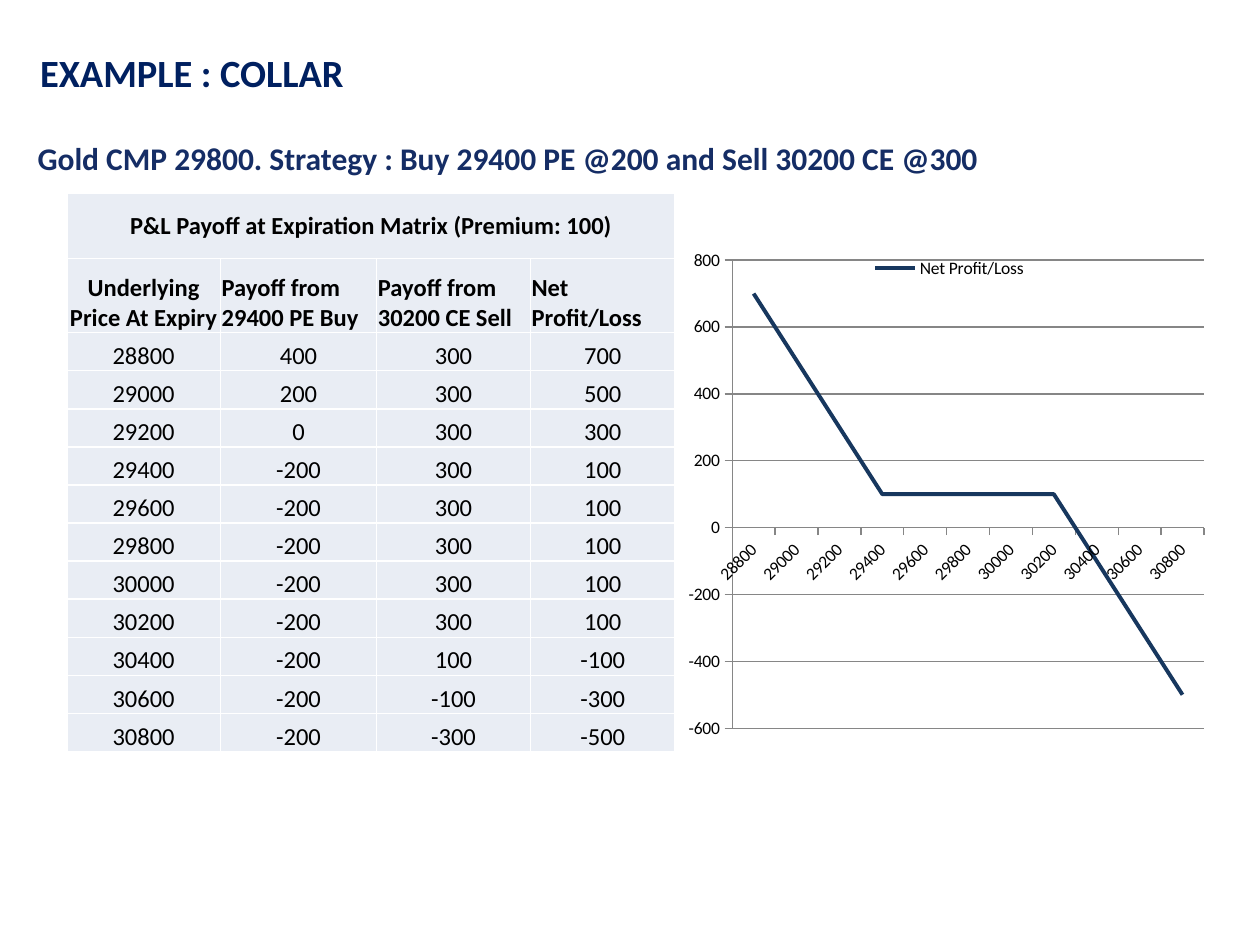
from lxml import etree
from pptx import Presentation, util as u
from pptx.chart.data import CategoryChartData
from pptx.dml.color import RGBColor
from pptx.enum import chart as ch, text
from pptx.oxml import parse_xml
from pptx.oxml.ns import nsdecls, qn

FONT = "Calibri"
HEADINGS = [
    ("EXAMPLE : COLLAR", (0.22, 0.3, 7.24, 0.55), 22, "002060"),
    ("Gold CMP 29800. Strategy : Buy 29400 PE @200 and Sell 30200 CE @300",
     (0.2, 1.05, 7.74, 0.4), 18, "152D65"),
]
TABLE_TITLE = "P&L Payoff at Expiration Matrix (Premium: 100)"
HEADERS = ["Underlying Price At Expiry", "Payoff from 29400 PE Buy",
           "Payoff from 30200 CE Sell", "Net Profit/Loss"]
PRICES = range(28800, 30801, 200)
PUT_STRIKE, PUT_COST = 29400, 200
CALL_STRIKE, CALL_INCOME = 30200, 300
COL_WIDTHS = [1.22, 1.24, 1.22, 1.15]
TABLE_LEFT, TABLE_TOP, TABLE_HEIGHT = 0.53, 1.53, 4.44
HEAD_HEIGHTS = [0.52, 0.59]
CHART_BOX = (5.38, 1.94, 4.31, 4.03)
PLOT = {"x": 0.1, "y": 0.031, "w": 0.869, "h": 0.922}


def rgb(value):
    return RGBColor.from_string(value)


def style(font, size, color="000000", bold=False):
    font.name, font.size, font.bold = FONT, u.Pt(size), bold
    font.color.rgb = rgb(color)


def payoff(price):
    put = max(PUT_STRIKE - price, 0) - PUT_COST
    call = CALL_INCOME - max(price - CALL_STRIKE, 0)
    return [price, put, call, put + call]


def add_heading(s, words, box, size, color):
    tf = s.shapes.add_textbox(*map(u.Inches, box)).text_frame
    tf.word_wrap = True
    tf.vertical_anchor = text.MSO_ANCHOR.MIDDLE
    tf.text = words
    style(tf.paragraphs[0].runs[0].font, size, color, True)


def format_cell(cell, words, bold, centred, anchor):
    cell.margin_left = cell.margin_right = cell.margin_top = u.Inches(0.01)
    cell.margin_bottom = 0
    cell.vertical_anchor = anchor
    tcPr = cell._tc.get_or_add_tcPr()
    for side in ("lnL", "lnR", "lnT", "lnB"):
        tcPr.append(parse_xml(
            f'<a:{side} {nsdecls("a")} w="12700"><a:solidFill>'
            f'<a:srgbClr val="FFFFFF"/></a:solidFill></a:{side}>'))
    cell.fill.solid()
    cell.fill.fore_color.rgb = rgb("E9EDF4")
    p = cell.text_frame.paragraphs[0]
    p.text = words
    p.alignment = text.PP_ALIGN.CENTER if centred else text.PP_ALIGN.LEFT
    style(p.font, 14, bold=bold)
    for r in p.runs:
        style(r.font, 14, bold=bold)


def add_payoff_table(s, payoffs):
    rows = [[TABLE_TITLE, "", "", ""], HEADERS] + payoffs
    body_height = (TABLE_HEIGHT - sum(HEAD_HEIGHTS)) / len(payoffs)
    heights = HEAD_HEIGHTS + [body_height] * len(payoffs)
    box = (TABLE_LEFT, TABLE_TOP, sum(COL_WIDTHS), TABLE_HEIGHT)
    table = s.shapes.add_table(len(rows), len(HEADERS), *map(u.Inches, box)).table
    table.first_row = table.horz_banding = False
    for column, width in zip(table.columns, COL_WIDTHS):
        column.width = u.Inches(width)
    for i, (values, height) in enumerate(zip(rows, heights)):
        table.rows[i].height = u.Inches(height)
        anchor = text.MSO_ANCHOR.BOTTOM if i else text.MSO_ANCHOR.MIDDLE
        for j, value in enumerate(values):
            format_cell(table.cell(i, j), str(value), i < 2, i != 1 or j == 0, anchor)
    table.cell(0, 0).merge(table.cell(0, len(HEADERS) - 1))


def set_plot_layout(chart):
    area = chart._chartSpace.find(".//" + qn("c:plotArea"))
    for old in area.findall(qn("c:layout")):
        area.remove(old)
    layout = etree.Element(qn("c:layout"))
    manual = etree.SubElement(layout, qn("c:manualLayout"))
    settings = {"layoutTarget": "inner", "xMode": "edge", "yMode": "edge", **PLOT}
    for tag, value in settings.items():
        etree.SubElement(manual, qn("c:" + tag)).set("val", str(value))
    area.insert(0, layout)


def add_payoff_chart(s, payoffs):
    data = CategoryChartData()
    data.categories = [str(row[0]) for row in payoffs]
    data.add_series(HEADERS[-1], [row[-1] for row in payoffs])
    chart = s.shapes.add_chart(ch.XL_CHART_TYPE.LINE, *map(u.Inches, CHART_BOX), data).chart
    style(chart.font, 10)
    chart.has_title = False
    chart.has_legend = True
    chart.legend.position = ch.XL_LEGEND_POSITION.TOP
    chart.legend.include_in_layout = False
    chart.legend._element.find(qn("c:overlay")).set("val", "1")
    chart.plots[0].vary_by_categories = False
    series = chart.plots[0].series[0]
    series.smooth = False
    series.marker.style = ch.XL_MARKER_STYLE.NONE
    series.format.line.color.rgb = rgb("17375E")
    series.format.line.width = u.Pt(2.25)
    value_axis, category_axis = chart.value_axis, chart.category_axis
    value_axis.minimum_scale, value_axis.maximum_scale = -600, 800
    value_axis.major_unit = 200
    value_axis.has_major_gridlines = True
    for axis in (value_axis, category_axis):
        axis.major_tick_mark = ch.XL_TICK_MARK.OUTSIDE
        style(axis.tick_labels.font, 10)
    for lines in (value_axis, category_axis, value_axis.major_gridlines):
        lines.format.line.color.rgb = rgb("868686")
        lines.format.line.width = u.Pt(0.75)
    category_axis._element.find(qn("c:txPr")).find(qn("a:bodyPr")).set("rot", "-2700000")
    set_plot_layout(chart)


def main():
    prs = Presentation()
    prs.slide_width, prs.slide_height = u.Inches(10), u.Inches(7.5)
    s = prs.slides.add_slide(prs.slide_layouts[6])
    payoffs = [payoff(price) for price in PRICES]
    for heading in HEADINGS:
        add_heading(s, *heading)
    add_payoff_table(s, payoffs)
    add_payoff_chart(s, payoffs)
    prs.save("out.pptx")


if __name__ == "__main__":
    main()
